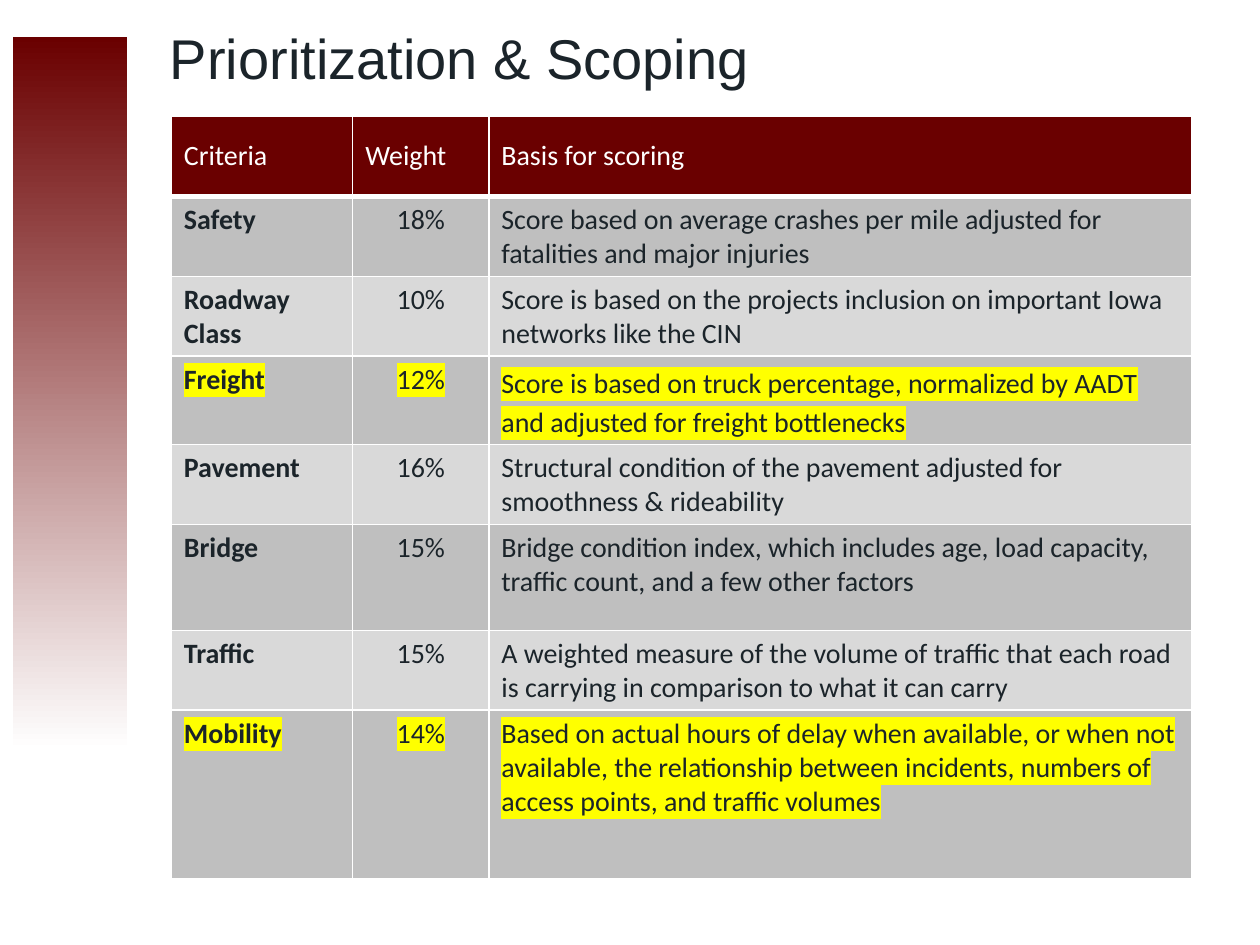
from lxml import etree
from pptx import Presentation
from pptx.dml.color import RGBColor
from pptx.enum.shapes import MSO_SHAPE
from pptx.enum.text import MSO_ANCHOR, PP_ALIGN
from pptx.oxml.ns import qn
from pptx.util import Inches, Pt

RECTANGLE = MSO_SHAPE.RECTANGLE
MIDDLE, TOP = MSO_ANCHOR.MIDDLE, MSO_ANCHOR.TOP
LEFT, CENTER = PP_ALIGN.LEFT, PP_ALIGN.CENTER

MAROON = RGBColor(0x6A, 0x00, 0x00)
WHITE = RGBColor(0xFF, 0xFF, 0xFF)
INK = RGBColor(0x1B, 0x24, 0x2A)
DARK_BAND = RGBColor(0xBF, 0xBF, 0xBF)
LIGHT_BAND = RGBColor(0xD9, 0xD9, 0xD9)
YELLOW = RGBColor(0xFF, 0xFF, 0x00)

TITLE = "Prioritization & Scoping"
HEADER = ("Criteria", "Weight", "Basis for scoring")
CRITERIA = [
    ("Safety", "18%", "Score based on average crashes per mile adjusted for "
     "fatalities and major injuries"),
    ("Roadway Class", "10%", "Score is based on the projects inclusion on "
     "important Iowa networks like the CIN"),
    ("Freight", "12%", "Score is based on truck percentage, normalized by AADT "
     "and adjusted for freight bottlenecks"),
    ("Pavement", "16%", "Structural condition of the pavement adjusted for "
     "smoothness & rideability"),
    ("Bridge", "15%", "Bridge condition index, which includes age, load "
     "capacity, traffic count, and a few other factors"),
    ("Traffic", "15%", "A weighted measure of the volume of traffic that each "
     "road is carrying in comparison to what it can carry"),
    ("Mobility", "14%", "Based on actual hours of delay when available, or when "
     "not available, the relationship between incidents, numbers of access "
     "points, and traffic volumes"),
]
HIGHLIGHTED = {"Freight", "Mobility"}
LOOSE_SPACING = {("Freight", 2): 1.13}
COLUMN_WIDTHS = (1.44, 1.08, 5.58)
ROW_HEIGHTS = (0.64, 0.6, 0.6, 0.59, 0.53, 0.84, 0.6, 1.34)


def add_color(parent, tag, color):
    element = etree.SubElement(parent, qn(tag))
    etree.SubElement(element, qn("a:srgbClr"), val=str(color))
    return element


def set_borders(cell, bottom_width):
    properties = cell._tc.get_or_add_tcPr()
    for side, width in (("L", 1), ("R", 1), ("T", 1), ("B", bottom_width)):
        line = etree.SubElement(properties, qn(f"a:ln{side}"), w=str(Pt(width)))
        add_color(line, "a:solidFill", WHITE)


def highlight(run):
    properties = run._r.get_or_add_rPr()
    mark = add_color(properties, "a:highlight", YELLOW)
    properties.find(qn("a:solidFill")).addnext(mark)


def style_font(font, name, size, color, bold=False):
    font.name, font.size, font.bold = name, Pt(size), bold
    font.color.rgb = color


presentation = Presentation()
presentation.slide_width, presentation.slide_height = Inches(10), Inches(7.5)
slide = presentation.slides.add_slide(presentation.slide_layouts[6])

# Fading side bar
bar = slide.shapes.add_shape(RECTANGLE, Inches(0.1), Inches(0.29), Inches(0.91), Inches(6.16))
bar.shadow.inherit = False
bar.line.fill.background()
bar.fill.gradient()
bar.fill.gradient_angle = 270
for stop, color, position in zip(bar.fill.gradient_stops, (MAROON, WHITE), (0, 0.92)):
    stop.color.rgb, stop.position = color, position

# Title
title = slide.shapes.add_textbox(Inches(1.25), Inches(0.26), Inches(8.75), Inches(0.38))
title.text_frame.word_wrap = True
title.text_frame.vertical_anchor = MIDDLE
title.text_frame.text = TITLE
style_font(title.text_frame.paragraphs[0].runs[0].font, "Arial", 32, INK)

# Scoring table
rows = [HEADER] + CRITERIA
table = slide.shapes.add_table(
    len(rows), len(HEADER), Inches(1.36), Inches(0.92),
    Inches(sum(COLUMN_WIDTHS)), Inches(sum(ROW_HEIGHTS))).table
for column, width in zip(table.columns, COLUMN_WIDTHS):
    column.width = Inches(width)

for row_index, values in enumerate(rows):
    table.rows[row_index].height = Inches(ROW_HEIGHTS[row_index])
    is_header = row_index == 0
    band = MAROON if is_header else DARK_BAND if row_index % 2 else LIGHT_BAND
    for column_index, value in enumerate(values):
        cell = table.cell(row_index, column_index)
        set_borders(cell, 3 if is_header else 1)
        cell.fill.solid()
        cell.fill.fore_color.rgb = band
        cell.vertical_anchor = MIDDLE if is_header else TOP
        cell.text_frame.text = value
        paragraph = cell.text_frame.paragraphs[0]
        paragraph.alignment = CENTER if column_index == 1 and not is_header else LEFT
        paragraph.line_spacing = LOOSE_SPACING.get((values[0], column_index))
        run = paragraph.runs[0]
        style_font(run.font, "Calibri", 16, WHITE if is_header else INK,
                   bold=column_index == 0 and not is_header)
        if values[0] in HIGHLIGHTED:
            highlight(run)

presentation.save("out.pptx")
